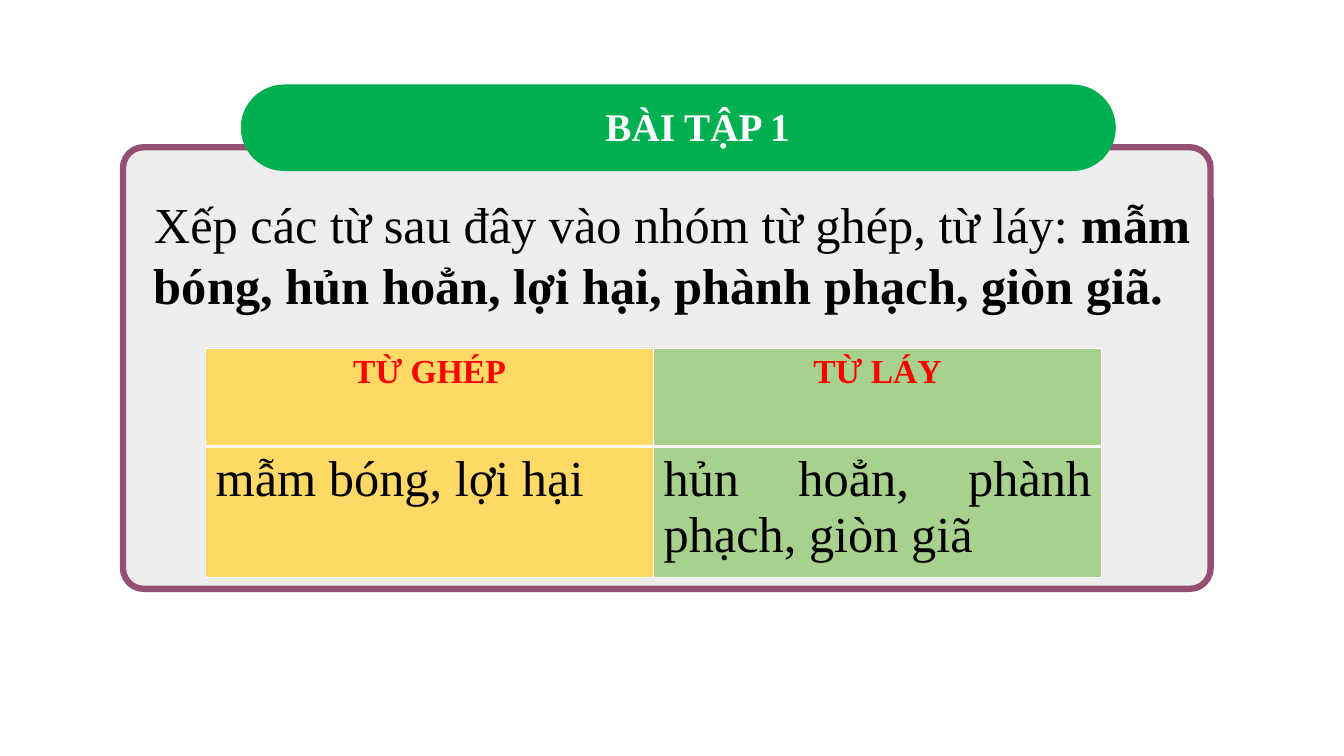
from lxml.etree import SubElement
from pptx import Presentation
from pptx.dml.color import RGBColor
from pptx.enum.shapes import MSO_SHAPE as Preset
from pptx.enum.text import MSO_AUTO_SIZE as AutoSize, PP_ALIGN as Align
from pptx.oxml.ns import qn
from pptx.util import Cm, Pt

COLORS = {
    "panel": "EDEDED", "frame": "954F72", "banner": "00B050",
    "yellow": "FFD966", "green": "A9D18E", "heading": "FF0000",
    "white": "FFFFFF", "black": "000000",
}
BANNER_TEXT = {"size": Pt(28), "bold": True, "color": "white"}
HEADING_TEXT = {"size": Pt(24), "bold": True, "color": "heading"}
BODY_TEXT = {"size": Pt(36), "bold": False, "color": "black"}
STRONG_TEXT = {**BODY_TEXT, "bold": True}


def rgb(name):
    return RGBColor.from_string(COLORS[name])


def add_text(paragraph, text, style):
    run = paragraph.add_run()
    run.text = text
    for name, value in {"name": "Times New Roman", **style}.items():
        if name == "color":
            run.font.color.rgb = rgb(value)
        else:
            setattr(run.font, name, value)


presentation = Presentation()
presentation.slide_width, presentation.slide_height = Cm(33.87), Cm(19.05)
slide = presentation.slides.add_slide(presentation.slide_layouts[6])

for box, rounding, fill, outline in [
    ((3.1, 3.71, 27.41, 11.13), 0.047, "panel", "frame"),
    ((6.07, 2.13, 22.05, 2.18), 0.5, "banner", None),
]:
    shape = slide.shapes.add_shape(Preset.ROUNDED_RECTANGLE, *map(Cm, box))
    shape.shadow.inherit = False
    shape.adjustments[0] = rounding
    shape.fill.solid()
    shape.fill.fore_color.rgb = rgb(fill)
    if outline:
        shape.line.color.rgb = rgb(outline)
        shape.line.width = Pt(4.5)
    else:
        shape.line.fill.background()

for box, wrap, alignment, runs in [
    ((15.01, 2.46, 5.21, 1.45), False, Align.JUSTIFY, [("BÀI TẬP 1", BANNER_TEXT)]),
    ((3.63, 4.75, 27.76, 3.33), True, Align.LEFT, [
        ("Xếp các từ sau đây vào nhóm từ ghép, từ láy: ", BODY_TEXT),
        ("mẫm bóng, hủn hoẳn, lợi hại, phành phạch, giòn giã.", STRONG_TEXT),
    ]),
]:
    frame = slide.shapes.add_textbox(*map(Cm, box)).text_frame
    frame.word_wrap = wrap
    frame.auto_size = AutoSize.SHAPE_TO_FIT_TEXT
    paragraph = frame.paragraphs[0]
    paragraph.alignment = alignment
    for text, style in runs:
        add_text(paragraph, text, style)

table = slide.shapes.add_table(2, 2, Cm(5.18), Cm(8.79), Cm(22.58), Cm(5.77)).table
rows = [
    (2.46, Align.CENTER, HEADING_TEXT, 3, ["TỪ GHÉP", "TỪ LÁY"]),
    (3.31, Align.JUSTIFY, BODY_TEXT, 1, ["mẫm bóng, lợi hại", "hủn hoẳn, phành phạch, giòn giã"]),
]
for row, (height, alignment, style, bottom_width, texts) in enumerate(rows):
    table.rows[row].height = Cm(height)
    top_width = rows[row - 1][3] if row else 1
    borders = {"a:lnL": 1, "a:lnR": 1, "a:lnT": top_width, "a:lnB": bottom_width}
    for column, (text, fill) in enumerate(zip(texts, ["yellow", "green"])):
        cell = table.cell(row, column)
        paragraph = cell.text_frame.paragraphs[0]
        paragraph.alignment = alignment
        add_text(paragraph, text, style)
        properties = cell._tc.get_or_add_tcPr()
        for tag, width in borders.items():
            border = SubElement(properties, qn(tag), w=str(Pt(width)))
            border_fill = SubElement(border, qn("a:solidFill"))
            SubElement(border_fill, qn("a:srgbClr"), val=COLORS["white"])
        cell.fill.solid()
        cell.fill.fore_color.rgb = rgb(fill)

presentation.save("out.pptx")
